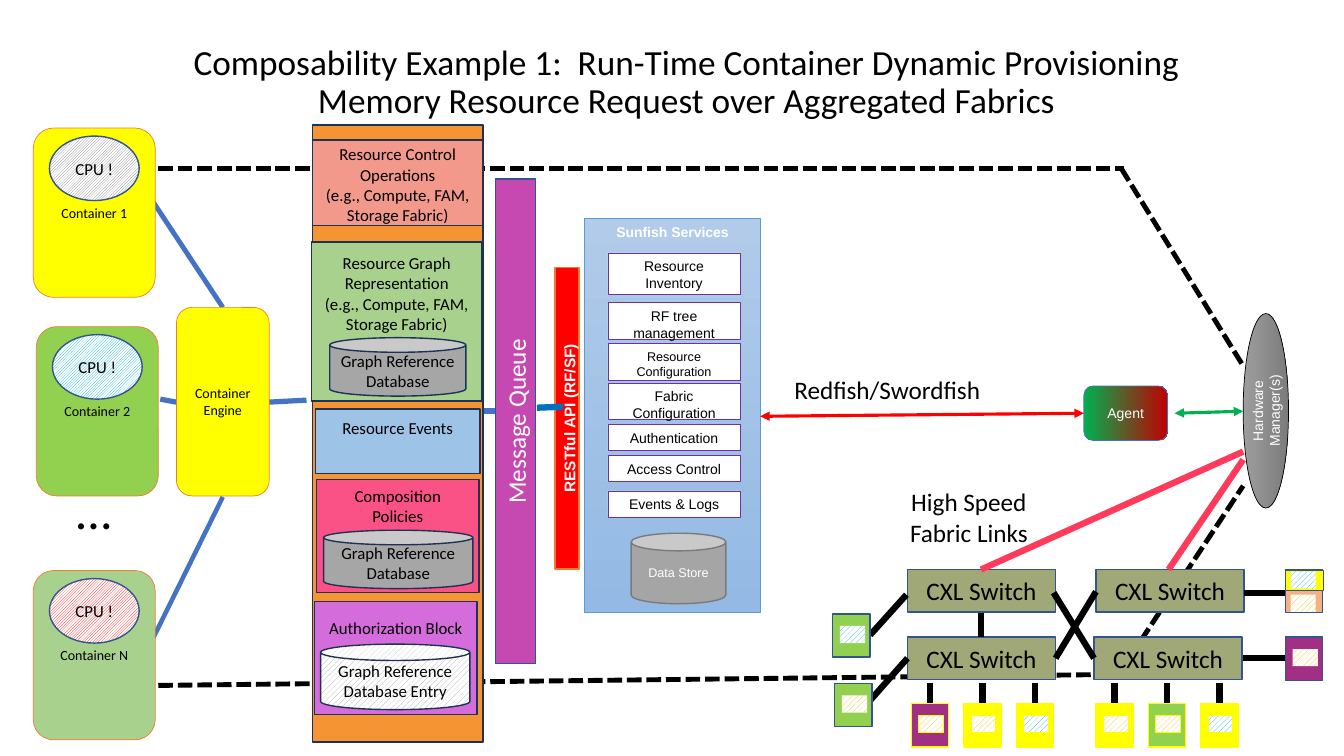
import dataclasses

import pptx
import pptx.dml.color
import pptx.enum.dml
import pptx.enum.shapes
import pptx.enum.text
import pptx.oxml
import pptx.oxml.ns
import pptx.util

SHAPE = pptx.enum.shapes.MSO_SHAPE
ANCHOR = pptx.enum.text.MSO_ANCHOR
ALIGN = pptx.enum.text.PP_ALIGN
PATTERN = pptx.enum.dml.MSO_PATTERN
LIGHT, WIDE = PATTERN.LIGHT_UPWARD_DIAGONAL, PATTERN.WIDE_UPWARD_DIAGONAL


@dataclasses.dataclass(frozen=True)
class Theme:
    body: str = "Calibri"
    label: str = "Arial"
    title_size: float = 25.2
    large: int = 18
    medium: int = 12
    banner: int = 11
    small: int = 10
    tiny: int = 9
    black: str = "000000"
    white: str = "FFFFFF"
    yellow: str = "FFFF00"
    green: str = "92D050"
    sage: str = "A9D18E"
    orange: str = "ED7D31"
    navy: str = "325491"
    dark: str = "1E3256"
    blue: str = "4472C4"
    sky: str = "00B0F0"
    amber: str = "FFC000"
    red: str = "FF0000"
    emerald: str = "00B050"
    rose: str = "FF3A5B"
    plum: str = "A12F83"
    grey: str = "A6A6A6"
    olive: str = "A1A878"
    violet: str = "7030A0"


@dataclasses.dataclass(frozen=True)
class Box:
    x: float
    y: float
    w: float
    h: float

    def sub(self, x, y, w, h):
        return Box(self.x + x, self.y + y, w, h)

    def point(self, x, y):
        return self.x + x, self.y + y


THEME = Theme()
COLUMNS, ROWS = 133.3, 75


def cells(count):
    return pptx.util.Inches(count / 10)


def rgb(value):
    return pptx.dml.color.RGBColor.from_string(value)


def apply(target, formats):
    for name, value in formats.items():
        setattr(target, name, value)


def paint(fill, colour):
    if isinstance(colour, str):
        fill.solid()
        fill.fore_color.rgb = rgb(colour)
    elif isinstance(colour[0], str):
        start, end, angle = colour
        fill.gradient()
        fill.gradient_angle = angle
        for stop, shade in zip(fill.gradient_stops, (start, end)):
            stop.color.rgb = rgb(shade)
    else:
        fill.patterned()
        fill.pattern = colour[0]
        fill.fore_color.rgb = rgb(colour[1])
        fill.back_color.rgb = rgb(THEME.white)


def write(frame, text, size, font=THEME.body, colour=THEME.black, bold=False,
          anchor=ANCHOR.MIDDLE, align=ALIGN.CENTER, top=0.5):
    frame.text = text
    apply(frame, {"word_wrap": True, "vertical_anchor": anchor, "margin_top": cells(top),
                  "auto_size": pptx.enum.text.MSO_AUTO_SIZE.NONE})
    for para in frame.paragraphs:
        para.alignment = align
        for span in para.runs:
            apply(span.font, {"name": font, "size": pptx.util.Pt(size), "bold": bold})
            span.font.color.rgb = rgb(colour)


def block(page, kind, box, fill, edge=None, width=1, text=None, upright=False, **style):
    w, h = (box.h, box.w) if upright else (box.w, box.h)
    left, top = box.x + (box.w - w) / 2, box.y + (box.h - h) / 2
    shape = page.shapes.add_shape(kind, *map(cells, (left, top, w, h)))
    apply(shape, {"rotation": 270 if upright else 0})
    shape.shadow.inherit = False
    paint(shape.fill, fill)
    if edge:
        shape.line.color.rgb = rgb(edge)
        shape.line.width = pptx.util.Pt(width)
    else:
        shape.line.fill.background()
    if text:
        write(shape.text_frame, text, **style)


def caption(page, box, text, **style):
    write(page.shapes.add_textbox(*map(cells, (box.x, box.y, box.w, box.h))).text_frame,
          text, anchor=ANCHOR.TOP, **style)


def link(page, start, end, colour, width, dashed=False, arrows=False):
    wire = page.shapes.add_connector(pptx.enum.shapes.MSO_CONNECTOR.STRAIGHT,
                                     *map(cells, (*start, *end)))
    wire.line.color.rgb = rgb(colour)
    wire.line.width = pptx.util.Pt(width)
    if dashed:
        wire.line.dash_style = pptx.enum.dml.MSO_LINE.SQUARE_DOT
    properties = wire._element.spPr
    outline = properties.find(pptx.oxml.ns.qn("a:ln"))
    space = pptx.oxml.ns.nsdecls("a")
    for end_name in ("headEnd", "tailEnd") if arrows else ():
        outline.append(pptx.oxml.parse_xml(f'<a:{end_name} {space} type="triangle"/>'))
    properties.append(pptx.oxml.parse_xml(f"<a:effectLst {space}/>"))


def draw_title(page, box):
    title = page.shapes.title
    apply(title, dict(zip(("left", "top", "width", "height"),
                          map(cells, (box.x, box.y, box.w, box.h)))))
    write(title.text_frame, "Composability Example 1:  Run-Time Container Dynamic Provisioning\v"
          "Memory Resource Request over Aggregated Fabrics", THEME.title_size)
    title.text_frame.paragraphs[0].line_spacing = 0.9


def draw_containers(page, box):
    for start, end, width in (((11.8, 7.2), (18.8, 17.8), 3.5), ((12.6, 26.9), (14.2, 27.2), 3.75),
                              ((11.3, 51.8), (18.8, 36.6), 3.25), ((23.3, 27.2), (27.1, 27), 3.75)):
        link(page, box.point(*start), box.point(*end), THEME.blue, width)
    block(page, SHAPE.ROUNDED_RECTANGLE, box.sub(14.2, 17.8, 9.2, 18.7), THEME.yellow, THEME.orange,
          0.5, "Container Engine", size=THEME.small)
    for name, x, y, fill, hatch in (("1", 0, 0, THEME.yellow, "7C7C7C"),
                                    ("2", 0.3, 19.7, THEME.green, "00ADD9"),
                                    ("N", 0, 43.9, THEME.sage, THEME.red)):
        unit = box.sub(x, y, 12.1, 16.8)
        block(page, SHAPE.ROUNDED_RECTANGLE, unit, fill, THEME.orange, 0.5,
              f"Container {name}", size=THEME.small)
        block(page, SHAPE.OVAL, unit.sub(1.6, 0.8, 8.9, 6.4), (LIGHT, hatch), THEME.navy, 1,
              "CPU !", size=THEME.medium)
    caption(page, box.sub(0, 34.3, 12, 7.1), "…", size=36)


def draw_management_paths(page, box):
    for start, end in (((0, 0), (95.8, 0)), ((95.5, 0), (107.6, 19.6)),
                       ((0, 51.3), (95.8, 50.2)), ((95.3, 50.1), (107.6, 31.5))):
        link(page, box.point(*start), box.point(*end), THEME.black, 3.5, dashed=True)


def draw_services(page, box):
    block(page, SHAPE.RECTANGLE, box, ("B1CBE9", "93B9E4", 270), "5B9BD5", 0.5, "Sunfish Services",
          size=THEME.small, font=THEME.label, colour=THEME.white, bold=True, anchor=ANCHOR.TOP)
    for text, y, h, size in (("Resource Inventory", 3.4, 4.1, THEME.small),
                             ("RF tree management", 8.3, 3.7, THEME.small),
                             ("Resource Configuration", 12.4, 3.6, THEME.tiny),
                             ("Fabric Configuration", 16.3, 3.6, THEME.small),
                             ("Authentication", 20.4, 2.6, THEME.small),
                             ("Access Control", 23.5, 2.6, THEME.small),
                             ("Events & Logs", 27, 2.6, THEME.small)):
        block(page, SHAPE.RECTANGLE, box.sub(2.3, y, 13.1, h), THEME.white, THEME.violet, 0.5,
              text, size=size, font=THEME.label, anchor=ANCHOR.TOP)
    block(page, SHAPE.CAN, box.sub(4.6, 31.2, 9.4, 7), "A5A5A5", "7A7A7A", 1, "Data Store",
          size=THEME.tiny, font=THEME.label, colour=THEME.white)


def draw_agents(page, box):
    labels = {"size": THEME.small, "font": THEME.label, "colour": THEME.white}
    block(page, SHAPE.OVAL, box.sub(47.9, 0, 4.5, 19.3), ("9D9D9D", "7C7C7C", 270), THEME.black, 0.5,
          "Hardware Manager(s)", upright=True, **labels)
    block(page, SHAPE.ROUNDED_RECTANGLE, box.sub(32.1, 7.2, 8.3, 5.4), (THEME.emerald, "C00000", 0),
          THEME.blue, 0.5, "Agent", **labels)
    link(page, box.point(0, 10.2), box.point(32.1, 9.9), THEME.red, 2.25, arrows=True)
    link(page, box.point(41.1, 9.9), box.point(47.9, 9.7), THEME.emerald, 2.25, arrows=True)
    caption(page, box.sub(2.4, 5.5, 30.1, 4), "Redfish/Swordfish", size=THEME.large, align=ALIGN.LEFT)


def draw_device(page, box, fill, edge, hatch, chip_edge=None):
    block(page, SHAPE.RECTANGLE, box, fill, edge)
    block(page, SHAPE.RECTANGLE, box.sub(0.7, 1.2, 2.5, 1.7), (WIDE, hatch), chip_edge)


def draw_fabric(page, box):
    for x, y in ((26.1, 8.7), (7.4, 8.7), (25.9, 15.4), (7.4, 15.4)):
        block(page, SHAPE.RECTANGLE, box.sub(x, y, 14.7, 4.2), THEME.olive, THEME.navy, 1,
              "CXL Switch", size=THEME.large)
    for start, end in (((14.7, 13), (14.7, 15.4)), ((40.7, 17.5), (44.9, 17.5)),
                       ((40.8, 11), (45, 11)), ((3.7, 15.2), (7.3, 11.2)), ((3.6, 21.8), (7.4, 17.5)),
                       ((21.9, 11), (25.9, 17.5)), ((26.1, 10.9), (22.1, 17.5))):
        link(page, box.point(*start), box.point(*end), THEME.black, 4.5)
    for group, fills in ((7.8, (THEME.plum, THEME.yellow, THEME.yellow)),
                         (26.1, (THEME.yellow, THEME.green, THEME.yellow))):
        for column, (fill, hatch) in enumerate(zip(fills, (THEME.amber, THEME.amber, THEME.sky))):
            x = group + column * 5.2
            draw_device(page, box.sub(x, 22, 3.7, 4.3), fill, THEME.yellow, hatch, THEME.yellow)
            link(page, box.point(x + 1.85, 20), box.point(x + 1.85, 21.9), THEME.black, 4.5)
    for x, y, fill, hatch in ((0, 13.1, THEME.green, THEME.sky), (0.2, 20, THEME.green, THEME.amber),
                              (44.9, 15.4, THEME.plum, THEME.amber)):
        draw_device(page, box.sub(x, y, 3.7, 4.3), fill, THEME.navy, hatch)
    shared = box.sub(44.9, 8.7, 3.7, 4.3)
    block(page, SHAPE.RECTANGLE, shared, "F4B183", THEME.navy)
    block(page, SHAPE.RECTANGLE, shared.sub(0, 0.1, 3.8, 2), THEME.yellow, THEME.navy)
    for y, hatch in ((0.2, THEME.sky), (2.5, THEME.amber)):
        block(page, SHAPE.RECTANGLE, shared.sub(0.5, y, 2.5, 1.7), (WIDE, hatch))
    for start, end in (((40.7, -3), (14.7, 8.7)), ((40.7, -2.2), (33.3, 8.7))):
        link(page, box.point(*start), box.point(*end), THEME.rose, 4.5)
    caption(page, box.sub(4.8, 0, 17.4, 7.1), "High Speed Fabric Links", size=THEME.large)


def draw_queue(page, box):
    link(page, box.point(-3.4, 23), box.point(0.1, 23), THEME.blue, 4.5)
    block(page, SHAPE.RECTANGLE, box.sub(5.9, 8.8, 2.4, 29.9), THEME.red, THEME.orange, 1,
          "RESTful API (RF/SF)", upright=True, size=THEME.banner, font=THEME.label,
          colour=THEME.white, bold=True, anchor=ANCHOR.TOP)
    block(page, SHAPE.RECTANGLE, box, "C649B1", THEME.navy, 1, "Message Queue", upright=True,
          size=THEME.large, colour=THEME.white)
    link(page, box.point(4.1, 22.7), box.point(6.7, 22.6), "0070C0", 4.5)


def draw_manager(page, box):
    block(page, SHAPE.RECTANGLE, box, "F49432", THEME.dark)
    scope = "(e.g., Compute, FAM, Storage Fabric)"
    for text, x, y, w, h, fill, top in (
            (f"Resource Control Operations\n{scope}", 0, 1.5, 16.9, 8.5, "F3998C", 0.4),
            ("Resource Events", 0.3, 28.2, 16.3, 6.4, "9DC3E6", 0.8),
            ("Composition\nPolicies", 0.4, 35.2, 16.1, 11.2, "FA5287", 0.6),
            (f"Resource Graph Representation\n{scope}", -0.1, 11.6, 16.9, 15.8, THEME.sage, 1.1),
            ("Authorization Block", 0.2, 47.3, 16.1, 11.2, "D46DDB", 1.6)):
        block(page, SHAPE.RECTANGLE, box.sub(x, y, w, h), fill, THEME.dark, 1, text,
              size=THEME.medium, anchor=ANCHOR.TOP, top=top)
    for text, x, y, w, h, fill in (
            ("Graph Reference Database", 1.7, 21.1, 13.5, 5.8, THEME.grey),
            ("Graph Reference Database", 1.1, 40.2, 14.8, 5.8, THEME.grey),
            ("Graph Reference Database Entry", 0.8, 51.5, 14.8, 6.5, (WIDE, THEME.grey))):
        block(page, SHAPE.CAN, box.sub(x, y, w, h), fill, THEME.dark, 1, text, size=THEME.medium)


def main():
    deck = pptx.Presentation()
    apply(deck, {"slide_width": cells(COLUMNS), "slide_height": cells(ROWS)})
    page = deck.slides.add_slide(deck.slide_layouts[5])
    for draw, box in ((draw_title, Box(3.7, 3.9, 128.8, 8.7)),
                      (draw_containers, Box(3.3, 12.7, 23.4, 60.7)),
                      (draw_management_paths, Box(15.7, 16.7, 107.6, 51.3)),
                      (draw_services, Box(58, 21.7, 17.4, 39.1)),
                      (draw_agents, Box(75.4, 31.1, 52.4, 19.3)),
                      (draw_fabric, Box(82.6, 47.8, 48.6, 26.3)),
                      (draw_queue, Box(49.15, 17.75, 4, 48.1)),
                      (draw_manager, Box(31, 12.4, 16.9, 61.2))):
        draw(page, box)
    deck.save("out.pptx")


if __name__ == "__main__":
    main()
